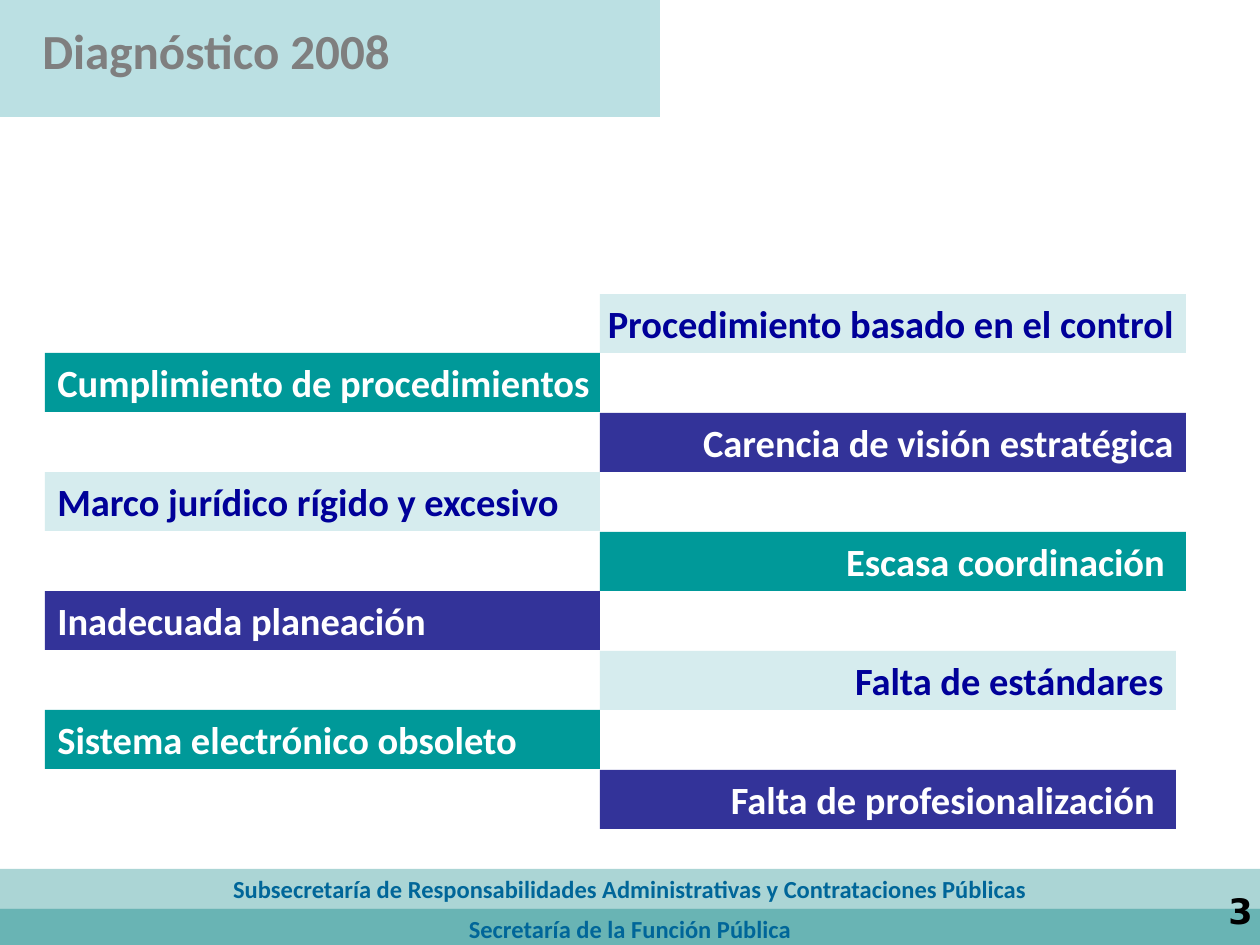
import pptx
import pptx.util
import pptx.dml.color
import pptx.enum.shapes
import pptx.enum.text
import pptx.oxml.ns
import lxml.etree

PX = 914400 // 126
COLORS = {
    "pale": "BBE0E3", "teal": "009999", "navy": "333399", "footer": "008080",
    "white": "FFFFFF", "black": "000000", "title": "7F7F7F",
    "bar_text": "000099", "footer_text": "006699",
}
ALIGN = pptx.enum.text.PP_ALIGN


def add_rect(x, y, w, h, color, opacity=100):
    sp = s.shapes.add_shape(pptx.enum.shapes.MSO_SHAPE.RECTANGLE,
                            x * PX, y * PX, w * PX, h * PX)
    sp.shadow.inherit = False
    sp.fill.solid()
    sp.fill.fore_color.rgb = pptx.dml.color.RGBColor.from_string(COLORS[color])
    sp.line.fill.background()
    if opacity < 100:
        clr = sp.fill._xPr.find(".//" + pptx.oxml.ns.qn("a:srgbClr"))
        lxml.etree.SubElement(clr, pptx.oxml.ns.qn("a:alpha"), val=str(opacity * 1000))
    return sp


def add_text(sp, text, size, color, align=ALIGN.LEFT, font="Calibri"):
    tf = sp.text_frame
    tf.word_wrap = False
    p = tf.paragraphs[0]
    p.alignment = align
    r = p.add_run()
    r.text = text
    r.font.name = font
    r.font.size = pptx.util.Pt(size)
    r.font.bold = True
    r.font.color.rgb = pptx.dml.color.RGBColor.from_string(COLORS[color])


prs = pptx.Presentation()
prs.slide_width = 1260 * PX
prs.slide_height = 945 * PX
s = prs.slides.add_slide(prs.slide_layouts[6])

# Title band
add_rect(0, 0, 660, 117, "pale")
title = s.shapes.add_textbox(30 * PX, 14 * PX, 620 * PX, 72 * PX)
add_text(title, "Diagnóstico 2008", 28, "title")

# Footer bands
add_rect(0, 833, 1260, 114, "white")
footers = [
    (869, 33, "Subsecretaría de Responsabilidades Administrativas y Contrataciones Públicas"),
    (909, 59, "Secretaría de la Función Pública"),
]
for y, opacity, text in footers:
    sp = add_rect(0, y, 1260, 40, "footer", opacity)
    add_text(sp, text, 14, "footer_text", ALIGN.CENTER)

# Findings: bars alternate right and left, colours cycle by three
findings = [
    "Procedimiento basado en el control",
    "Cumplimiento de procedimientos",
    "Carencia de visión estratégica",
    "Marco jurídico rígido y excesivo",
    "Escasa coordinación ",
    "Inadecuada planeación",
    "Falta de estándares",
    "Sistema electrónico obsoleto",
    "Falta de profesionalización ",
]
styles = [("pale", 60, "bar_text"), ("teal", 100, "white"), ("navy", 100, "white")]
for i, text in enumerate(findings):
    fill, opacity, color = styles[i % 3]
    if i % 2 == 0:
        x, w, align = 600, 586 if i < 6 else 576, ALIGN.RIGHT
    else:
        x, w, align = 45, 555, ALIGN.LEFT
    sp = add_rect(x, 294 + i * 119 // 2, w, 59, fill, opacity)
    add_text(sp, text, 22, color, align)

# Page number
number = s.shapes.add_textbox(1216 * PX, 883 * PX, 39 * PX, 55 * PX)
add_text(number, "3", 20, "black", font="DejaVu Sans")

prs.save("out.pptx")
